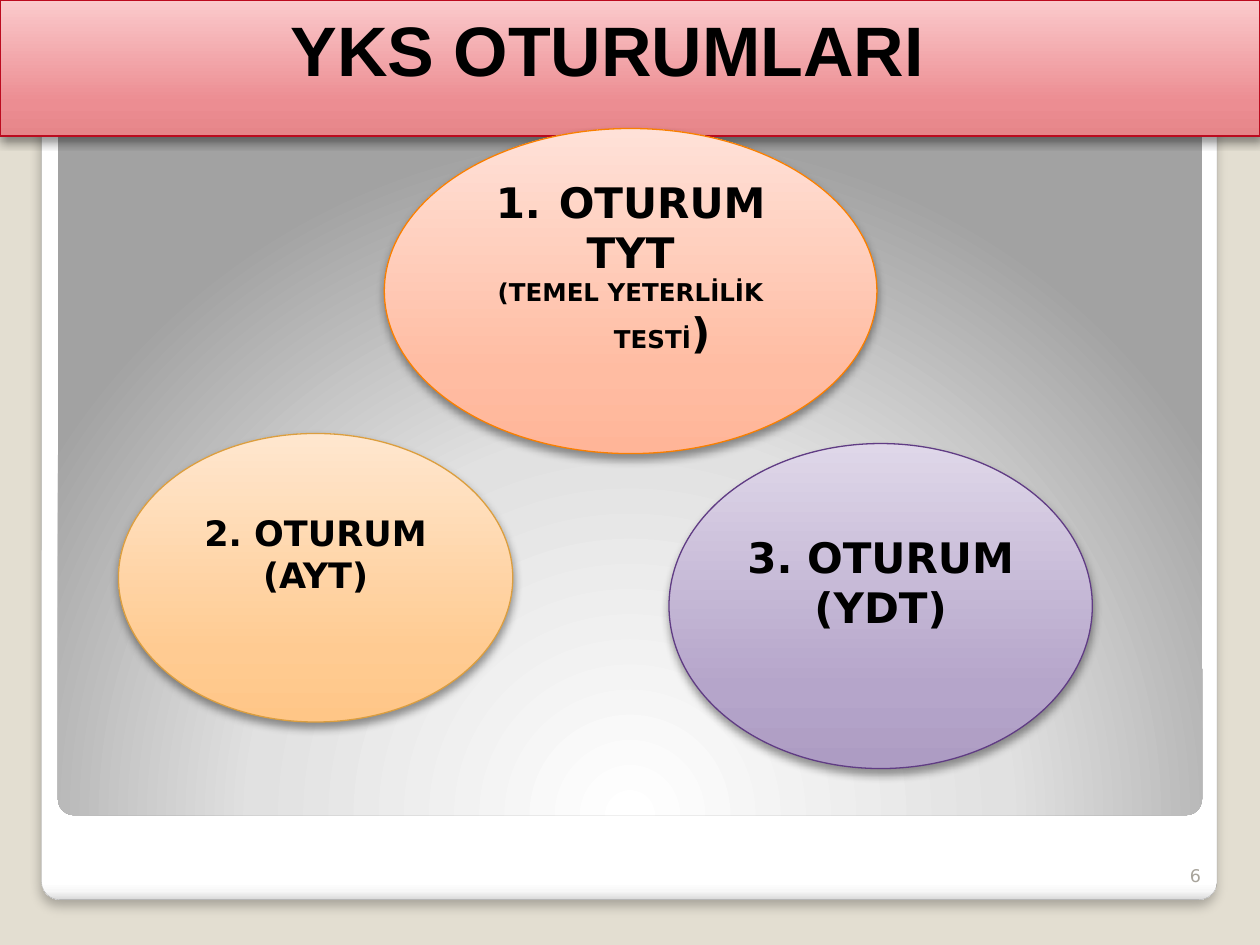
from dataclasses import dataclass
from typing import Optional

from lxml import etree
from pptx import Presentation, util as u
from pptx.dml.color import RGBColor
from pptx.enum import shapes, text
from pptx.oxml.ns import qn

# Grid: 100 columns by 75 rows of square cells
COLUMNS, ROWS = 100, 75
CELL = u.Inches(0.1)

BLACK = RGBColor(0x00, 0x00, 0x00)
WHITE = RGBColor(0xFF, 0xFF, 0xFF)
SAND = RGBColor(0xE3, 0xDE, 0xD1)
FRAME_LINE = RGBColor(0xA4, 0xA4, 0xA4)
NUMBER_GREY = RGBColor(0xA8, 0xA4, 0x9B)
TITLE_OUTLINE = RGBColor(0xEC, 0x78, 0x00)
RED_LINE = RGBColor(0xBC, 0x0B, 0x1F)
AMBER_LINE = RGBColor(0xDB, 0x9E, 0x3F)
PURPLE_LINE = RGBColor(0x60, 0x3C, 0x84)
ORANGE_LINE = RGBColor(0xF9, 0x7F, 0x00)

# Gradient stops: position in percent and colour
FRAME_STOPS = ((0, WHITE), (98, WHITE), (99, RGBColor(0xF7, 0xF7, 0xF7)),
               (100, RGBColor(0xDA, 0xDA, 0xDA)))
PANEL_STOPS = ((0, WHITE), (55, RGBColor(0xE1, 0xE1, 0xE1)),
               (100, RGBColor(0xA2, 0xA2, 0xA2)))


def tint_stops(deep: str, middle: str, pale: str) -> tuple:
    return tuple(zip((0, 25, 100), map(RGBColor.from_string, (deep, middle, pale))))


RED_STOPS = tint_stops("E68589", "EC8D92", "FBCACC")
AMBER_STOPS = tint_stops("FFC687", "FFCB92", "FFE7CF")
PURPLE_STOPS = tint_stops("AD9CC3", "B5A5CA", "DFD7E9")
ORANGE_STOPS = tint_stops("FFB598", "FFBCA2", "FFE1D8")


@dataclass(frozen=True)
class Box:
    column: float
    row: float
    columns: float
    rows: float

    def emu(self) -> list:
        return [round(n * CELL) for n in (self.column, self.row, self.columns, self.rows)]


@dataclass(frozen=True)
class Shadow:
    opacity: int
    blur: float
    distance: float


@dataclass(frozen=True)
class Session:
    box: Box
    stops: tuple
    line: RGBColor
    lines: tuple  # each line is a tuple of (words, size) runs
    numbered: bool = False


SOFT = Shadow(25, 6, 4)
STRONG = Shadow(40, 5.2, 3)

SESSIONS = (
    Session(Box(9.4, 34.4, 31.3, 22.9), AMBER_STOPS, AMBER_LINE,
            ((("2. OTURUM", 20),), (("(AYT)", 20),))),
    Session(Box(53.1, 35.2, 33.6, 25.8), PURPLE_STOPS, PURPLE_LINE,
            ((("3. OTURUM", 24),), (("(YDT)", 24),))),
    Session(Box(30.5, 10.2, 39.1, 25.8), ORANGE_STOPS, ORANGE_LINE,
            ((("OTURUM", 24),), (("TYT", 24),),
             (("(TEMEL YETERLİLİK TESTİ", 14), (")", 24))), numbered=True),
)


def add_node(parent, tag: str, **attributes):
    return etree.SubElement(parent, qn(tag), {k: str(v) for k, v in attributes.items()})


def add_color(parent, color: RGBColor):
    return add_node(parent, "a:srgbClr", val=color)


def set_gradient(shape, stops: tuple, angle: Optional[int]) -> None:
    """Linear at the angle, or circular from below the shape if there is none."""
    shape.fill.gradient()
    gradient = shape.element.spPr.find(qn("a:gradFill"))
    for child in list(gradient):
        gradient.remove(child)
    stop_list = add_node(gradient, "a:gsLst")
    for position, color in stops:
        add_color(add_node(stop_list, "a:gs", pos=position * 1000), color)
    if angle is None:
        circle = add_node(gradient, "a:path", path="circle")
        add_node(circle, "a:fillToRect", l=50000, t=175000, r=50000, b=-75000)
    else:
        add_node(gradient, "a:lin", ang=angle * 60000, scaled=0)


def draw_shape(slide, kind, box: Box, stops: tuple, angle: Optional[int] = 270,
               line: Optional[RGBColor] = None, width: float = 0.75,
               shadow: Optional[Shadow] = None, corner: Optional[float] = None):
    shape = slide.shapes.add_shape(kind, *box.emu())
    if corner is not None:
        shape.adjustments[0] = corner
    set_gradient(shape, stops, angle)
    if line is None:
        shape.line.fill.background()
    else:
        shape.line.color.rgb = line
        shape.line.width = u.Pt(width)
    shape.shadow.inherit = False
    if shadow:
        effects = shape.element.spPr.find(qn("a:effectLst"))
        outer = add_node(effects, "a:outerShdw", blurRad=u.Pt(shadow.blur),
                         dist=u.Pt(shadow.distance), dir=90 * 60000, rotWithShape=0)
        add_node(add_color(outer, BLACK), "a:alpha", val=shadow.opacity * 1000)
    return shape


def write(paragraph, words: str, *, size: float, font: str = "DejaVu Sans",
          color: RGBColor = BLACK, bold: bool = True,
          align=text.PP_ALIGN.CENTER, outline: Optional[RGBColor] = None) -> None:
    paragraph.alignment = align
    run = paragraph.add_run()
    run.text = words
    run.font.size, run.font.name, run.font.bold = u.Pt(size), font, bold
    run.font.color.rgb = color
    if outline is not None:
        edge = etree.Element(qn("a:ln"), w=str(u.Pt(0.83)))
        add_color(add_node(edge, "a:solidFill"), outline)
        run.font._element.insert(0, edge)


def draw_session(slide, session: Session) -> None:
    oval = draw_shape(slide, shapes.MSO_SHAPE.OVAL, session.box, session.stops,
                      line=session.line, shadow=STRONG)
    frame = oval.text_frame
    frame.word_wrap = True
    frame.vertical_anchor = text.MSO_ANCHOR.MIDDLE
    frame.margin_bottom = u.Inches(0.44)  # lifts the words above the centre
    for index, runs in enumerate(session.lines):
        paragraph = frame.add_paragraph() if index else frame.paragraphs[0]
        for words, size in runs:
            write(paragraph, words, size=size)
        if session.numbered:
            properties = paragraph._p.get_or_add_pPr()
            properties.set("marL", str(u.Inches(0.5)))
            properties.set("indent", str(u.Inches(-0.5)))
            if index == 0:
                add_node(properties, "a:buFont", typeface="DejaVu Sans")
                add_node(properties, "a:buAutoNum", type="arabicPeriod")
            else:
                add_node(properties, "a:buNone")


def draw_label(slide, box: Box, words: str, anchor=text.MSO_ANCHOR.TOP, **style) -> None:
    frame = slide.shapes.add_textbox(*box.emu()).text_frame
    frame.word_wrap = True
    frame.vertical_anchor = anchor
    write(frame.paragraphs[0], words, **style)


def main() -> None:
    deck = Presentation()
    deck.slide_width, deck.slide_height = COLUMNS * CELL, ROWS * CELL
    slide = deck.slides.add_slide(deck.slide_layouts[6])
    slide.background.fill.solid()
    slide.background.fill.fore_color.rgb = SAND

    # White frame and grey panel
    rounded = shapes.MSO_SHAPE.ROUNDED_RECTANGLE
    draw_shape(slide, rounded, Box(3.3, 3.6, 93.3, 67.8), FRAME_STOPS, angle=90,
               line=FRAME_LINE, width=0.16, shadow=SOFT, corner=0.021)
    draw_shape(slide, rounded, Box(4.6, 4.7, 90.8, 60), PANEL_STOPS, angle=None,
               corner=0.021)

    # Title banner
    draw_shape(slide, shapes.MSO_SHAPE.RECTANGLE, Box(0, 0, COLUMNS, 10.8), RED_STOPS,
               line=RED_LINE, shadow=STRONG)
    draw_label(slide, Box(-1.8, 0, COLUMNS, 11.8), "YKS OTURUMLARI",
               size=40, font="Arial", outline=TITLE_OUTLINE)

    # Exam sessions
    for session in SESSIONS:
        draw_session(slide, session)

    # Slide number
    draw_label(slide, Box(91.3, 66.8, 5, 4), "6", anchor=text.MSO_ANCHOR.BOTTOM, size=10,
               color=NUMBER_GREY, bold=False, align=text.PP_ALIGN.RIGHT)
    deck.save("out.pptx")


if __name__ == "__main__":
    main()
